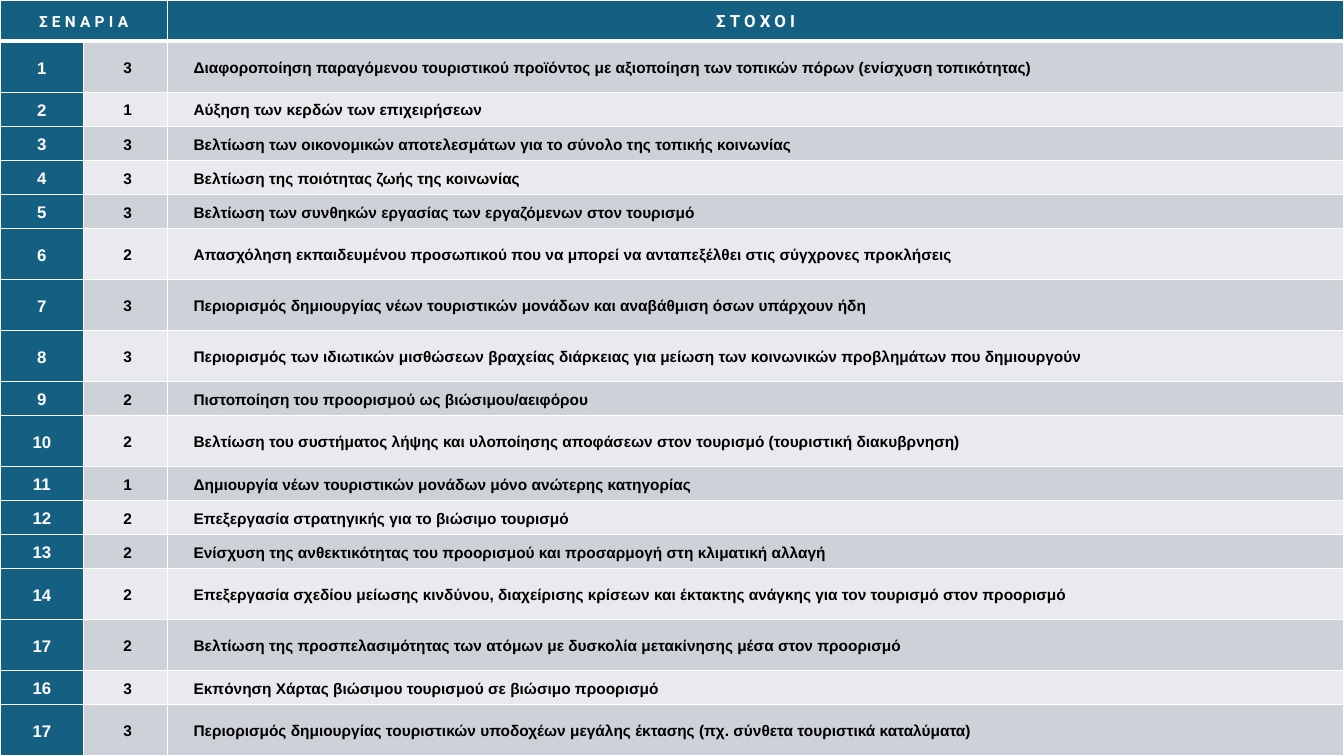
import pptx
import pptx.dml.color
import pptx.enum.text
import pptx.oxml
import pptx.oxml.ns
import pptx.util
from pptx.util import Inches

COLORS = {"teal": "156082", "dark_band": "CCD2D8", "light_band": "E8EAED",
          "white": "FFFFFF", "black": "000000"}
HEADER_HEIGHT = 0.41
SLIDE_HEIGHT = 7.5
CENTER = pptx.enum.text.PP_ALIGN.CENTER
LEFT = pptx.enum.text.PP_ALIGN.LEFT

# number, scenario, goal, row height in half units (2 = short, 3 = tall)
goals = [
    ("1", "3", "Διαφοροποίηση παραγόμενου τουριστικού προϊόντος με αξιοποίηση των τοπικών πόρων (ενίσχυση τοπικότητας)", 3),
    ("2", "1", "Αύξηση των κερδών των επιχειρήσεων", 2),
    ("3", "3", "Βελτίωση των οικονομικών αποτελεσμάτων για το σύνολο της τοπικής κοινωνίας", 2),
    ("4", "3", "Βελτίωση της ποιότητας ζωής της κοινωνίας", 2),
    ("5", "3", "Βελτίωση των συνθηκών εργασίας των εργαζόμενων στον τουρισμό", 2),
    ("6", "2", "Απασχόληση εκπαιδευμένου προσωπικού που να μπορεί να ανταπεξέλθει στις σύγχρονες προκλήσεις", 3),
    ("7", "3", "Περιορισμός δημιουργίας νέων τουριστικών μονάδων και αναβάθμιση όσων υπάρχουν ήδη", 3),
    ("8", "3", "Περιορισμός των ιδιωτικών μισθώσεων βραχείας διάρκειας για μείωση των κοινωνικών προβλημάτων που δημιουργούν", 3),
    ("9", "2", "Πιστοποίηση του προορισμού ως βιώσιμου/αειφόρου", 2),
    ("10", "2", "Βελτίωση του συστήματος λήψης και υλοποίησης αποφάσεων στον τουρισμό (τουριστική διακυβρνηση)", 3),
    ("11", "1", "Δημιουργία νέων τουριστικών μονάδων μόνο ανώτερης κατηγορίας", 2),
    ("12", "2", "Επεξεργασία στρατηγικής για το βιώσιμο τουρισμό", 2),
    ("13", "2", "Ενίσχυση της ανθεκτικότητας του προορισμού και προσαρμογή στη κλιματική αλλαγή", 2),
    ("14", "2", "Επεξεργασία σχεδίου μείωσης κινδύνου, διαχείρισης κρίσεων και έκτακτης ανάγκης για τον τουρισμό στον προορισμό", 3),
    ("17", "2", "Βελτίωση της προσπελασιμότητας των ατόμων με δυσκολία μετακίνησης μέσα στον προορισμό", 3),
    ("16", "3", "Εκπόνηση Χάρτας βιώσιμου τουρισμού σε βιώσιμο προορισμό", 2),
    ("17", "3", "Περιορισμός δημιουργίας τουριστικών υποδοχέων μεγάλης έκτασης (πχ. σύνθετα τουριστικά καταλύματα)", 3),
]


def add_borders(cell, bottom_width):
    """Draw white cell borders; must run before the cell gets its fill."""
    cell_properties = cell._tc.get_or_add_tcPr()
    for side, width in (("L", 1), ("R", 1), ("T", 1), ("B", bottom_width)):
        cell_properties.append(pptx.oxml.parse_xml(
            f'<a:ln{side} {pptx.oxml.ns.nsdecls("a")} w="{pptx.util.Pt(width)}">'
            f'<a:solidFill><a:srgbClr val="{COLORS["white"]}"/></a:solidFill>'
            f'</a:ln{side}>'))


def fill_cell(cell, text, fill, color, size, align=CENTER, font="Arial",
              bottom_width=1, left_margin=0.06):
    add_borders(cell, bottom_width)
    cell.fill.solid()
    cell.fill.fore_color.rgb = pptx.dml.color.RGBColor.from_string(COLORS[fill])
    cell.vertical_anchor = pptx.enum.text.MSO_ANCHOR.MIDDLE
    cell.margin_left = Inches(left_margin)
    cell.margin_right = Inches(0.06)
    cell.margin_top = cell.margin_bottom = 0
    cell.text = text
    paragraph = cell.text_frame.paragraphs[0]
    paragraph.alignment = align
    paragraph.line_spacing = 1.15
    paragraph.font.name = font
    paragraph.font.size = pptx.util.Pt(size)
    paragraph.font.bold = True
    paragraph.font.color.rgb = pptx.dml.color.RGBColor.from_string(COLORS[color])


presentation = pptx.Presentation()
presentation.slide_width = Inches(13.33)
presentation.slide_height = Inches(SLIDE_HEIGHT)
slide = presentation.slides.add_slide(presentation.slide_layouts[6])

table = slide.shapes.add_table(len(goals) + 1, 3, 0, 0, Inches(13.33),
                               Inches(SLIDE_HEIGHT)).table
table.horz_banding = False
for column, width in zip(table.columns, (0.83, 0.83, 11.67)):
    column.width = Inches(width)

table.rows[0].height = Inches(HEADER_HEIGHT)
table.cell(0, 0).merge(table.cell(0, 1))
for column, heading, size in ((0, "ΣΕΝΑΡΙΑ", 11), (1, "", 11), (2, "ΣΤΟΧΟΙ", 12)):
    cell = table.cell(0, column)
    fill_cell(cell, heading, "teal", "white", size, font="Roboto", bottom_width=3)
    for run in cell.text_frame.paragraphs[0].runs:
        run._r.get_or_add_rPr().set("spc", "300")

half_unit = (SLIDE_HEIGHT - HEADER_HEIGHT) / sum(goal[3] for goal in goals)
for row, (number, scenario, goal, half_units) in enumerate(goals, start=1):
    table.rows[row].height = Inches(half_unit * half_units)
    band = "dark_band" if row % 2 else "light_band"
    fill_cell(table.cell(row, 0), number, "teal", "white", 12)
    fill_cell(table.cell(row, 1), scenario, band, "black", 11, left_margin=0.1)
    fill_cell(table.cell(row, 2), goal, band, "black", 11, align=LEFT, left_margin=0.26)

presentation.save("out.pptx")
